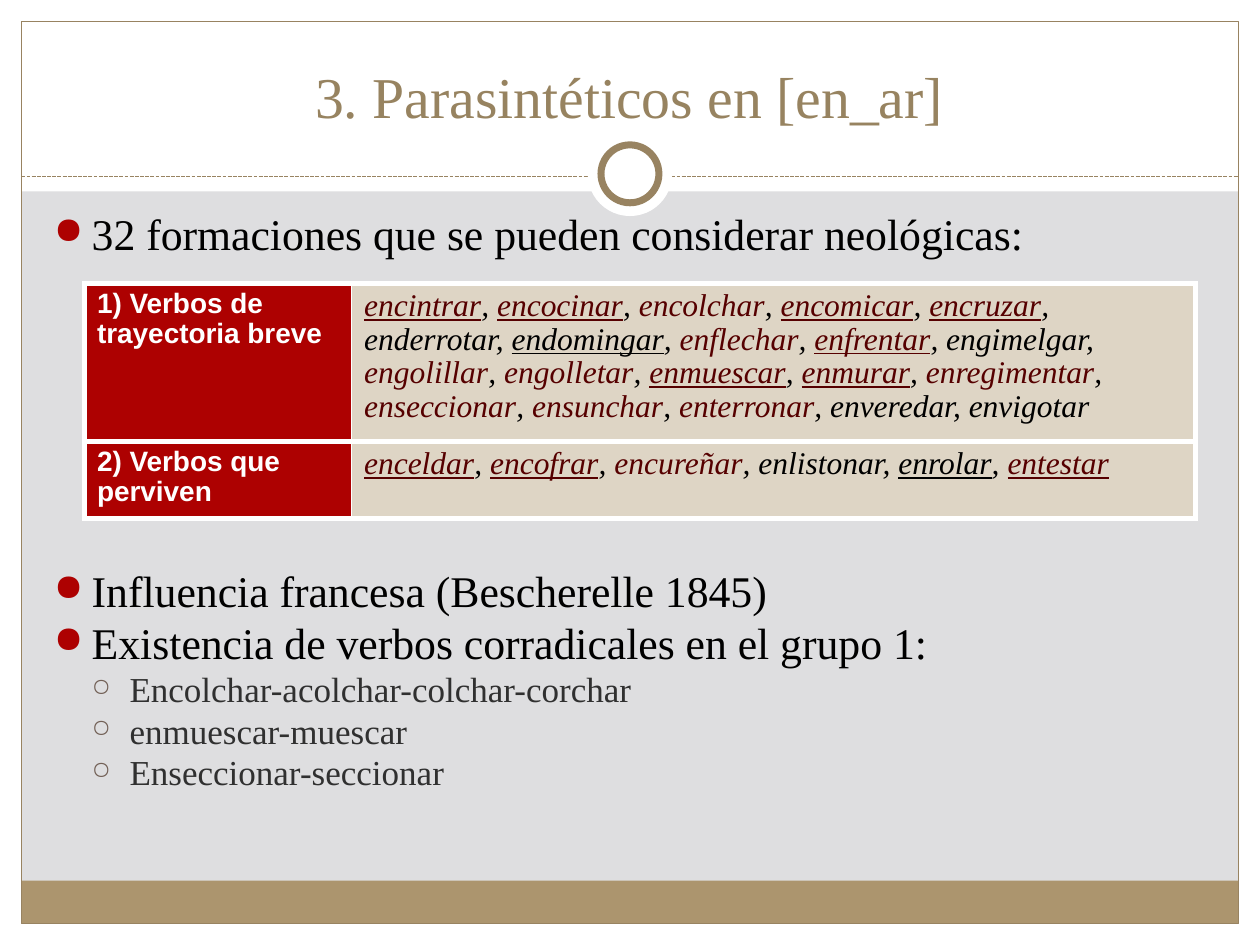
from dataclasses import dataclass

from lxml import etree
from pptx import Presentation
from pptx.dml.color import RGBColor
from pptx.enum.dml import MSO_LINE
from pptx.enum.shapes import MSO_CONNECTOR, MSO_SHAPE
from pptx.enum.text import MSO_ANCHOR, MSO_AUTO_SIZE, PP_ALIGN
from pptx.oxml.ns import qn
from pptx.util import Inches, Pt

RECT, OVAL = MSO_SHAPE.RECTANGLE, MSO_SHAPE.OVAL
STRAIGHT, SYS_DASH = MSO_CONNECTOR.STRAIGHT, MSO_LINE.SQUARE_DOT
CENTER, BOTTOM, NO_FIT = PP_ALIGN.CENTER, MSO_ANCHOR.BOTTOM, MSO_AUTO_SIZE.NONE

WHITE = RGBColor(0xFF, 0xFF, 0xFF)
BLACK = RGBColor(0x00, 0x00, 0x00)
GREY = RGBColor(0xDE, 0xDE, 0xE0)
TAN = RGBColor(0xAC, 0x95, 0x6E)
BROWN = RGBColor(0x98, 0x83, 0x61)
TITLE_BROWN = RGBColor(0x97, 0x83, 0x60)
RED = RGBColor(0xAD, 0x01, 0x01)
DARK_RED = RGBColor(0x56, 0x00, 0x00)
BEIGE = RGBColor(0xDE, 0xD5, 0xC5)
CHARCOAL = RGBColor(0x30, 0x30, 0x30)
TAUPE = RGBColor(0x72, 0x60, 0x56)
SERIF, SANS = "Times New Roman", "Arial"

WIDTH, HEIGHT, MARGIN = 10, 7.5, 0.17
INNER = WIDTH - 2 * MARGIN
RULE_Y = 1.4


@dataclass(frozen=True)
class Panel:
    left: float
    top: float
    width: float
    height: float
    fill: RGBColor | None = WHITE
    line: float = 0
    kind: MSO_SHAPE = RECT


@dataclass(frozen=True)
class Level:
    bullet: str
    bullet_color: RGBColor
    bullet_size: int
    size: int
    color: RGBColor
    indent: float


@dataclass(frozen=True)
class Item:
    text: str
    level: int = 0
    gap: float | None = None


def ring(size: float, line: float = 0) -> Panel:
    """A white disc centred on the slide, just above the dashed rule."""
    return Panel((WIDTH - size) / 2, 1.38 - size / 2, size, size, WHITE, line, OVAL)


BACK_PANELS = [
    Panel(0, HEIGHT - MARGIN, WIDTH, MARGIN),
    Panel(0, 0, WIDTH, 1.52),
    Panel(0, 0, MARGIN, HEIGHT),
    Panel(WIDTH - MARGIN, 0, MARGIN, HEIGHT),
    Panel(MARGIN, 6.99, INNER, 0.34, TAN),
    Panel(MARGIN, MARGIN, INNER, HEIGHT - 2 * MARGIN, None, 0.75),
]
RINGS = [ring(0.67), ring(0.46, 4)]

LEVELS = [
    Level("●", RED, 85, 25, BLACK, 0.3),
    Level("○", TAUPE, 70, 20, CHARCOAL, 0.6),
]
ITEMS = [
    Item("32 formaciones que se pueden considerar neológicas:"),
    Item("Influencia francesa (Bescherelle 1845)", gap=180),
    Item("Existencia de verbos corradicales en el grupo 1:"),
    Item("Encolchar-acolchar-colchar-corchar", 1),
    Item("enmuescar-muescar", 1),
    Item("Enseccionar-seccionar", 1),
]

VERB_GROUPS = {
    "1) Verbos de trayectoria breve":
        "encintrar encocinar encolchar encomicar encruzar enderrotar endomingar "
        "enflechar enfrentar engimelgar engolillar engolletar enmuescar enmurar "
        "enregimentar enseccionar ensunchar enterronar enveredar envigotar",
    "2) Verbos que perviven":
        "enceldar encofrar encureñar enlistonar enrolar entestar",
}
BLACK_VERBS = set("enderrotar endomingar engimelgar enveredar envigotar "
                  "enlistonar enrolar".split())
UNDERLINED = set("encintrar encocinar encomicar encruzar endomingar enfrentar "
                 "enmuescar enmurar enceldar encofrar enrolar entestar".split())
COLUMNS, ROWS = (2.12, 6.7), (1.2, 0.59)


def style(r, size: float, color: RGBColor, name: str = SERIF) -> None:
    r.font.size, r.font.name = Pt(size), name
    r.font.color.rgb = color


def add_panel(s, panel: Panel) -> None:
    box = map(Inches, (panel.left, panel.top, panel.width, panel.height))
    sp = s.shapes.add_shape(panel.kind, *box)
    sp.shadow.inherit = False
    if panel.fill is None:
        sp.fill.background()
    else:
        sp.fill.solid()
        sp.fill.fore_color.rgb = panel.fill
    if panel.line:
        sp.line.color.rgb, sp.line.width = BROWN, Pt(panel.line)
    else:
        sp.line.fill.background()


def add_rule(s) -> None:
    y = Inches(RULE_Y)
    rule = s.shapes.add_connector(STRAIGHT, Inches(MARGIN), y, Inches(WIDTH - MARGIN), y)
    rule.line.color.rgb, rule.line.width = BROWN, Pt(0.75)
    rule.line.dash_style = SYS_DASH
    etree.SubElement(rule.element.spPr, qn("a:effectLst"))


def format_title(s) -> None:
    title = s.shapes.title
    title.left, title.top, title.width, title.height = map(Inches, (0.33, 0.25, 9.33, 0.83))
    tf = title.text_frame
    tf.text = "3. Parasintéticos en [en_ar]"
    tf.auto_size, tf.vertical_anchor = NO_FIT, BOTTOM
    p = tf.paragraphs[0]
    p.alignment = CENTER
    style(p.runs[0], 33, TITLE_BROWN)
    title.element.getparent().append(title.element)  # in front of the panels


def add_bullet(p, level: Level) -> None:
    pPr = p._p.get_or_add_pPr()
    pPr.set("marL", str(Inches(level.indent)))
    pPr.set("indent", str(Inches(-0.3)))
    color = etree.SubElement(pPr, qn("a:buClr"))
    etree.SubElement(color, qn("a:srgbClr"), val=str(level.bullet_color))
    etree.SubElement(pPr, qn("a:buSzPct"), val=str(level.bullet_size * 1000))
    etree.SubElement(pPr, qn("a:buChar"), char=level.bullet)


def add_items(s) -> None:
    tf = s.shapes.add_textbox(*map(Inches, (0.33, 1.67, 9.3, 5.31))).text_frame
    tf.word_wrap = True
    for i, item in enumerate(ITEMS):
        level = LEVELS[item.level]
        p = tf.add_paragraph() if i else tf.paragraphs[0]
        p.text, p.level, p.line_spacing = item.text, item.level, 0.8
        p.space_before = Pt(item.gap or level.size * 0.23)
        style(p.runs[0], level.size, level.color)
        add_bullet(p, level)


def format_cell(cell, fill: RGBColor, left: float, right: float) -> None:
    """Set the fill and white borders; left and right are widths in points."""
    tcPr = cell._tc.get_or_add_tcPr()
    for side, width in (("L", left), ("R", right), ("T", 3), ("B", 3)):
        border = etree.SubElement(tcPr, qn(f"a:ln{side}"), w=str(Pt(width)))
        solid = etree.SubElement(border, qn("a:solidFill"))
        etree.SubElement(solid, qn("a:srgbClr"), val=str(WHITE))
    cell.fill.solid()
    cell.fill.fore_color.rgb = fill
    cell.text_frame.paragraphs[0].line_spacing = 0.96


def add_verb_run(p, text: str, color: RGBColor, underline: bool = False) -> None:
    r = p.add_run()
    r.text = text
    style(r, 18, color)
    r.font.bold, r.font.italic, r.font.underline = False, True, underline


def add_verb_table(s) -> None:
    box = map(Inches, (0.67, 2.25, sum(COLUMNS), sum(ROWS)))
    table = s.shapes.add_table(len(ROWS), len(COLUMNS), *box).table
    for column, width in zip(table.columns, COLUMNS):
        column.width = Inches(width)
    for row, height, (heading, verbs) in zip(table.rows, ROWS, VERB_GROUPS.items()):
        row.height = Inches(height)
        head, body = row.cells
        head.text = heading
        r = head.text_frame.paragraphs[0].runs[0]
        style(r, 16, WHITE, SANS)
        r.font.bold = True
        p = body.text_frame.paragraphs[0]
        for i, verb in enumerate(verbs.split()):
            if i:
                add_verb_run(p, ", ", BLACK)
            add_verb_run(p, verb, BLACK if verb in BLACK_VERBS else DARK_RED, verb in UNDERLINED)
        format_cell(head, RED, 3, 1)
        format_cell(body, BEIGE, 1, 3)


def main() -> None:
    prs = Presentation()
    prs.slide_width, prs.slide_height = Inches(WIDTH), Inches(HEIGHT)
    s = prs.slides.add_slide(prs.slide_layouts[5])
    s.background.fill.solid()
    s.background.fill.fore_color.rgb = GREY
    for panel in BACK_PANELS:
        add_panel(s, panel)
    add_rule(s)
    for panel in RINGS:
        add_panel(s, panel)
    format_title(s)
    add_items(s)
    add_verb_table(s)
    prs.save("out.pptx")


if __name__ == "__main__":
    main()
